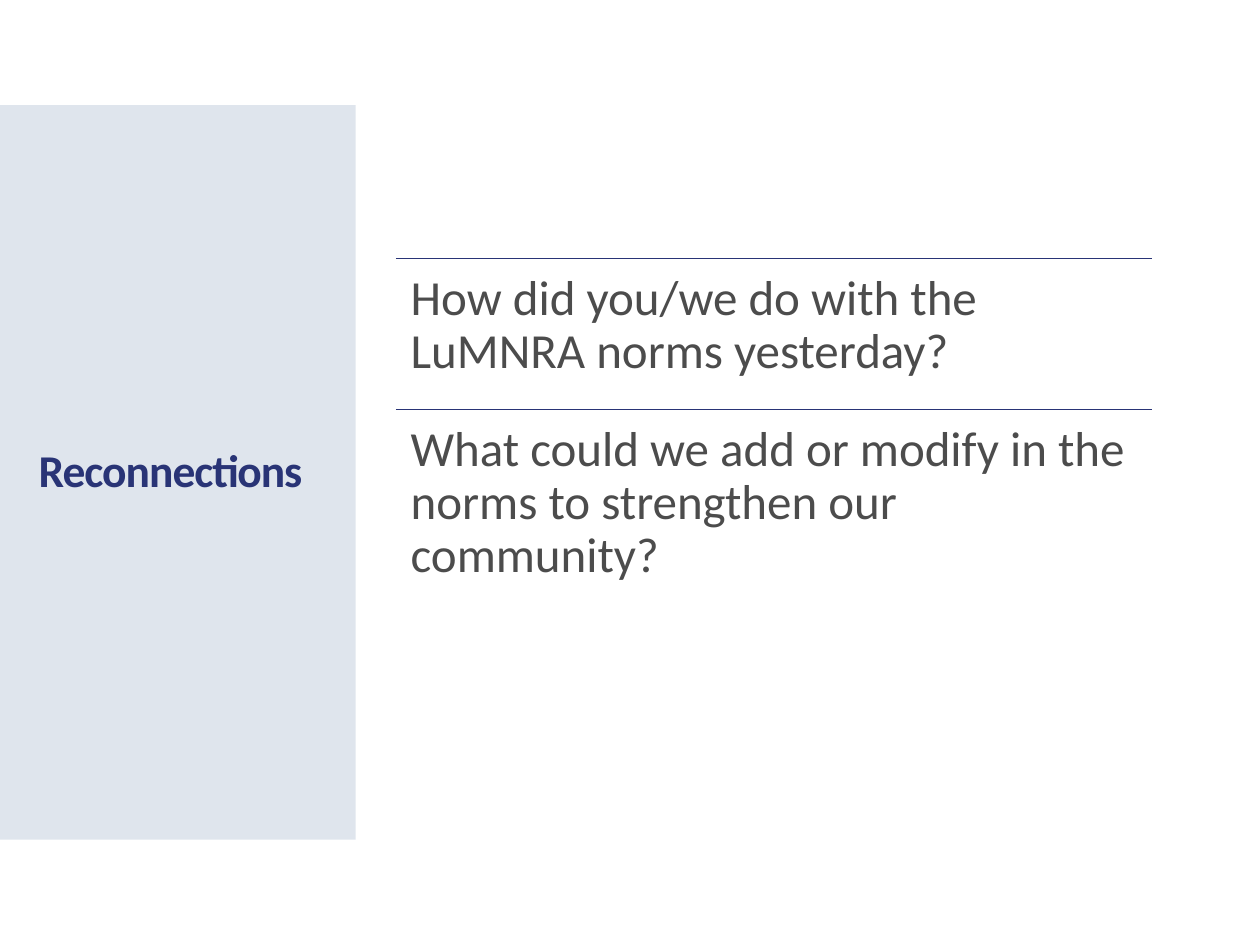
import pptx
import pptx.util
import pptx.dml.color
import pptx.enum.shapes
import pptx.enum.text
import pptx.oxml.ns
from lxml import etree

Cm = pptx.util.Cm
Pt = pptx.util.Pt
RGBColor = pptx.dml.color.RGBColor

NAVY = RGBColor(0x29, 0x34, 0x76)
PALE_BLUE = RGBColor(0xDF, 0xE5, 0xED)
GREY = RGBColor(0x4C, 0x4C, 0x4C)

TITLE_FONT = {"name": "Calibri", "size": Pt(26), "bold": True}
QUESTION_FONT = {"name": "Calibri", "size": Pt(28), "bold": False}
QUESTIONS = [
    ("How did you/we do with the LuMNRA norms yesterday?", Cm(3.05)),
    ("What could we add or modify in the norms to strengthen our community?", Cm(5.54)),
]


def add_text(page, left, top, width, height, text, font, color, anchor, inset):
    """Add a wrapped one-paragraph text box and return its span."""
    box = page.shapes.add_textbox(left, top, width, height)
    frame_format = {"word_wrap": True, "vertical_anchor": anchor,
                    "margin_left": inset, "margin_right": inset,
                    "margin_top": inset, "margin_bottom": inset}
    for name, value in frame_format.items():
        setattr(box.text_frame, name, value)
    para = box.text_frame.paragraphs[0]
    para.line_spacing = 0.9
    span = para.add_run()
    span.text = text
    for name, value in font.items():
        setattr(span.font, name, value)
    span.font.color.rgb = color
    return span


def add_title_panel(page, left, top, width, height):
    """Add the pale side panel with the slide title centred in its height."""
    panel = page.shapes.add_shape(
        pptx.enum.shapes.MSO_SHAPE.RECTANGLE, left, top, width, height)
    panel.shadow.inherit = False
    panel.fill.solid()
    panel.fill.fore_color.rgb = PALE_BLUE
    panel.line.fill.background()
    span = add_text(page, left + Cm(0.53), top + Cm(1), width - Cm(1.02), height - Cm(2),
                    "Reconnections", TITLE_FONT, NAVY,
                    pptx.enum.text.MSO_ANCHOR.MIDDLE, Cm(0.25))
    span.font._element.set("spc", "-60")


def add_rule(page, left, top, width):
    """Add a thin horizontal rule."""
    rule = page.shapes.add_connector(
        pptx.enum.shapes.MSO_CONNECTOR.STRAIGHT, left, top, left + width, top)
    rule.line.color.rgb = NAVY
    rule.line.width = Pt(0.85)
    etree.SubElement(rule._element.spPr, pptx.oxml.ns.qn("a:effectLst"))


def add_questions(page, left, top, width):
    """Stack the questions, each below its own rule."""
    for text, height in QUESTIONS:
        add_rule(page, left, top, width)
        add_text(page, left, top, width, height, text, QUESTION_FONT, GREY,
                 pptx.enum.text.MSO_ANCHOR.TOP, Cm(0.3))
        top += height


def main():
    """Build the slide and save the deck."""
    deck = pptx.Presentation()
    deck.slide_width, deck.slide_height = Cm(25.4), Cm(19.05)
    page = deck.slides.add_slide(deck.slide_layouts[6])
    add_title_panel(page, Cm(0), Cm(2.12), Cm(7.17), Cm(14.81))
    add_questions(page, Cm(7.98), Cm(5.21), Cm(15.24))
    deck.save("out.pptx")


if __name__ == "__main__":
    main()
